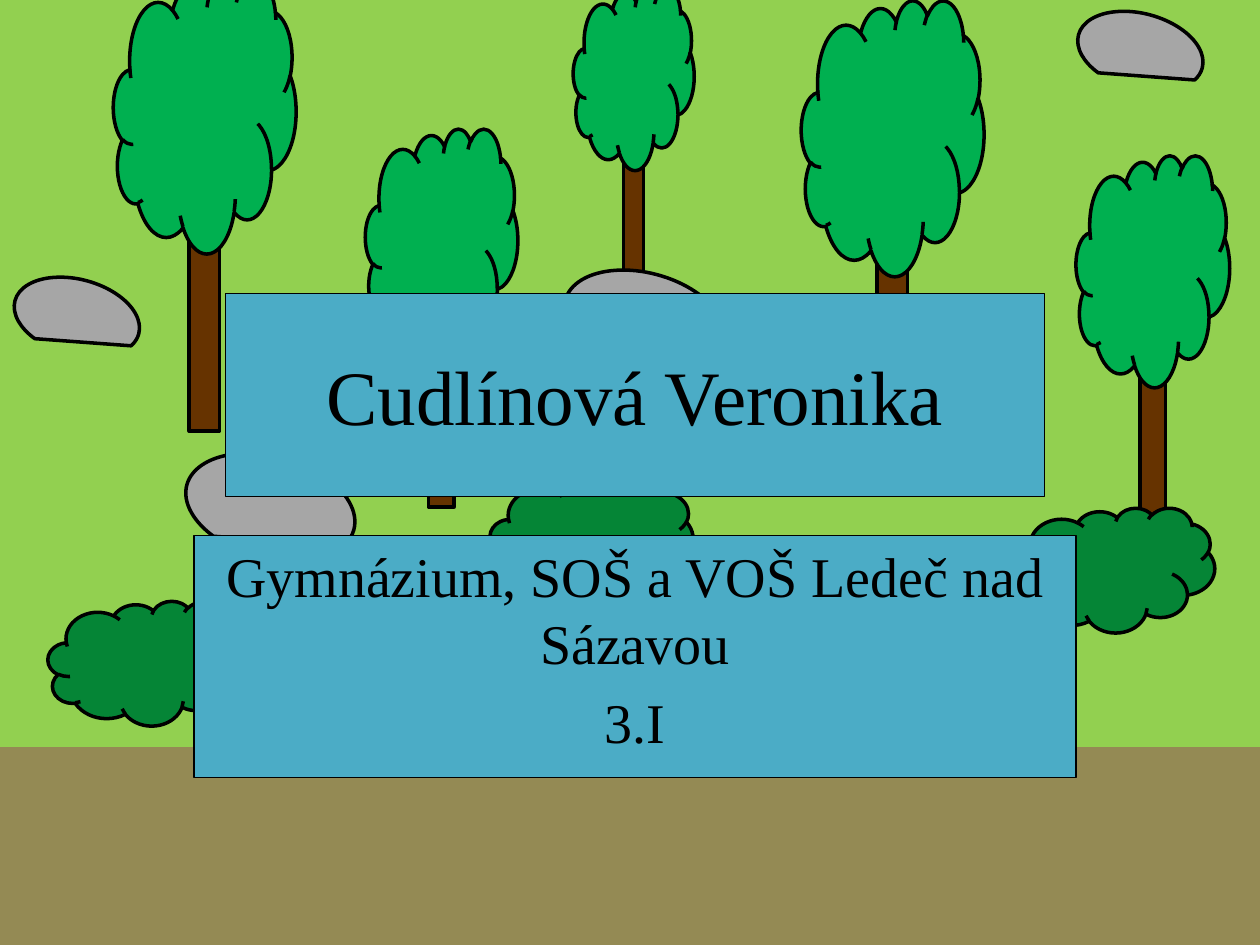
from pptx import Presentation
from pptx.dml.color import RGBColor
from pptx.enum.shapes import MSO_SHAPE
from pptx.enum.text import MSO_ANCHOR, MSO_AUTO_SIZE, PP_ALIGN
from pptx.util import Pt

RECT, CLOUD, CHORD = MSO_SHAPE.RECTANGLE, MSO_SHAPE.CLOUD, MSO_SHAPE.CHORD
TOP, MIDDLE = MSO_ANCHOR.TOP, MSO_ANCHOR.MIDDLE
CENTER = PP_ALIGN.CENTER
NO_AUTOFIT = MSO_AUTO_SIZE.NONE

MEADOW, GROUND, PANEL = "92D050", "948A54", "4BACC6"
TRUNK, CROWN, BUSH, ROCK, BLACK = "663300", "00B050", "058536", "A6A6A6", "000000"

TREES = [(64.8, -13, 104.4), (208.8, 73.4, 87.1), (457.9, 0, 104.4),
         (327.6, -7.2, 69.1), (614.9, 88.6, 87.8)]
BUSHES = [(280.1, 272.9), (27.4, 343.4), (578.2, 290.2)]
ROCKS = [(22.3, 144.7, 43.2), (125.3, 240.5, 58.3),
         (340.6, 136.8, 55.4), (630, -7.2, 43.2)]


def color(value):
    return RGBColor.from_string(value)


def write(shape, paragraphs, size, font="Times New Roman", ink=BLACK,
          anchor=TOP, space_before=0):
    frame = shape.text_frame
    frame.text = "\n".join(paragraphs)
    frame.word_wrap = True
    frame.auto_size = NO_AUTOFIT
    frame.vertical_anchor = anchor
    for paragraph in frame.paragraphs:
        paragraph.alignment = CENTER
        paragraph.space_before = Pt(space_before)
        for run in paragraph.runs:
            run.font.name = font
            run.font.size = Pt(size)
            run.font.color.rgb = color(ink)


class ForestSlide:
    outline = 2
    panel_outline = 0.75

    def __init__(self, slide):
        self.slide = slide

    def paint(self, shape, fill, line=None):
        shape.fill.solid()
        shape.fill.fore_color.rgb = color(fill)
        if line is None:
            shape.line.fill.background()
        else:
            shape.line.color.rgb = color(BLACK)
            shape.line.width = Pt(line)

    def shape(self, kind, left, top, width, height, fill, line=None):
        shape = self.slide.shapes.add_shape(
            kind, Pt(left), Pt(top), Pt(width), Pt(height))
        shape.shadow.inherit = False
        self.paint(shape, fill, line)
        return shape

    def tree(self, left, top, width):
        height = 1.51 * width
        self.shape(RECT, left + 0.415 * width, top + 0.795 * height,
                   width / 6, 0.85 * height, TRUNK, self.outline)
        self.shape(CLOUD, left, top, width, height, CROWN, self.outline)

    def bush(self, left, top):
        self.shape(CLOUD, left, top, 115.9, 71.3, BUSH, self.outline)

    def rock(self, left, top, width):
        rock = self.shape(CHORD, left, top, width, 1.695 * width, ROCK, self.outline)
        rock.adjustments[0] = 28.84
        rock.adjustments[1] = 169.64
        rock.rotation = 105

    def title(self, text, left, top, width, height):
        title = self.slide.shapes.title
        title.left, title.top = Pt(left), Pt(top)
        title.width, title.height = Pt(width), Pt(height)
        self.paint(title, PANEL, self.panel_outline)
        write(title, [text], 44, anchor=MIDDLE)
        self.slide.shapes._spTree.append(title._element)

    def subtitle(self, paragraphs, left, top, width, height):
        panel = self.shape(RECT, left, top, width, height, PANEL, self.panel_outline)
        write(panel, paragraphs, 32, space_before=6.4)


def main():
    deck = Presentation()
    deck.slide_width, deck.slide_height = Pt(720), Pt(540)
    forest = ForestSlide(deck.slides.add_slide(deck.slide_layouts[5]))

    forest.shape(RECT, -8.6, -13.7, 762.5, 555.8, MEADOW)
    for tree in TREES:
        forest.tree(*tree)
    for bush in BUSHES:
        forest.bush(*bush)
    for rock in ROCKS:
        forest.rock(*rock)
    forest.shape(RECT, -8.6, 427, 762.5, 115.2, GROUND)

    forest.title("Cudlínová Veronika", 128.9, 167.8, 468, 115.9)
    forest.subtitle(["Gymnázium, SOŠ a VOŠ Ledeč nad Sázavou", "3.I"],
                    110.9, 306, 504, 138.2)
    deck.save("out.pptx")


if __name__ == "__main__":
    main()
